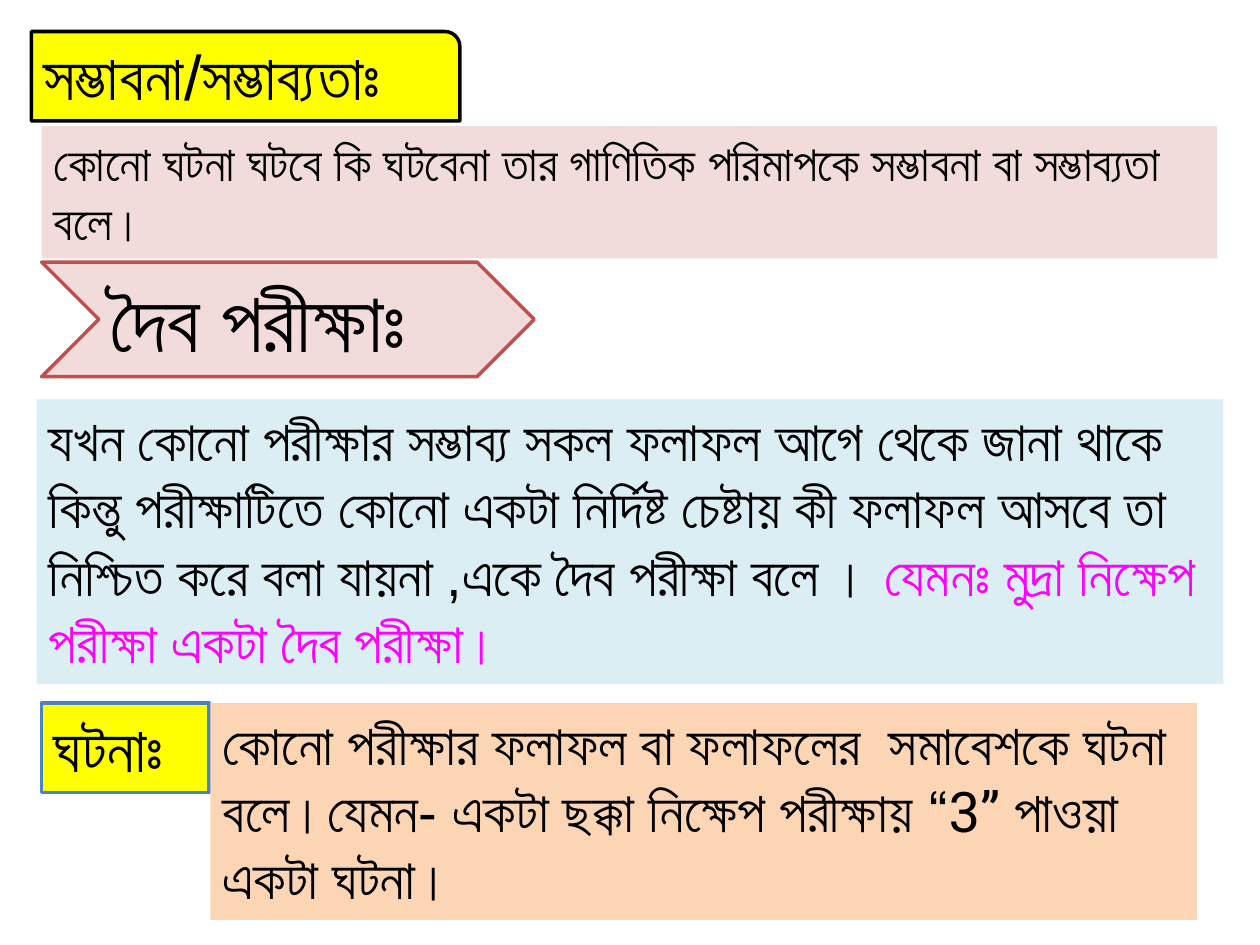
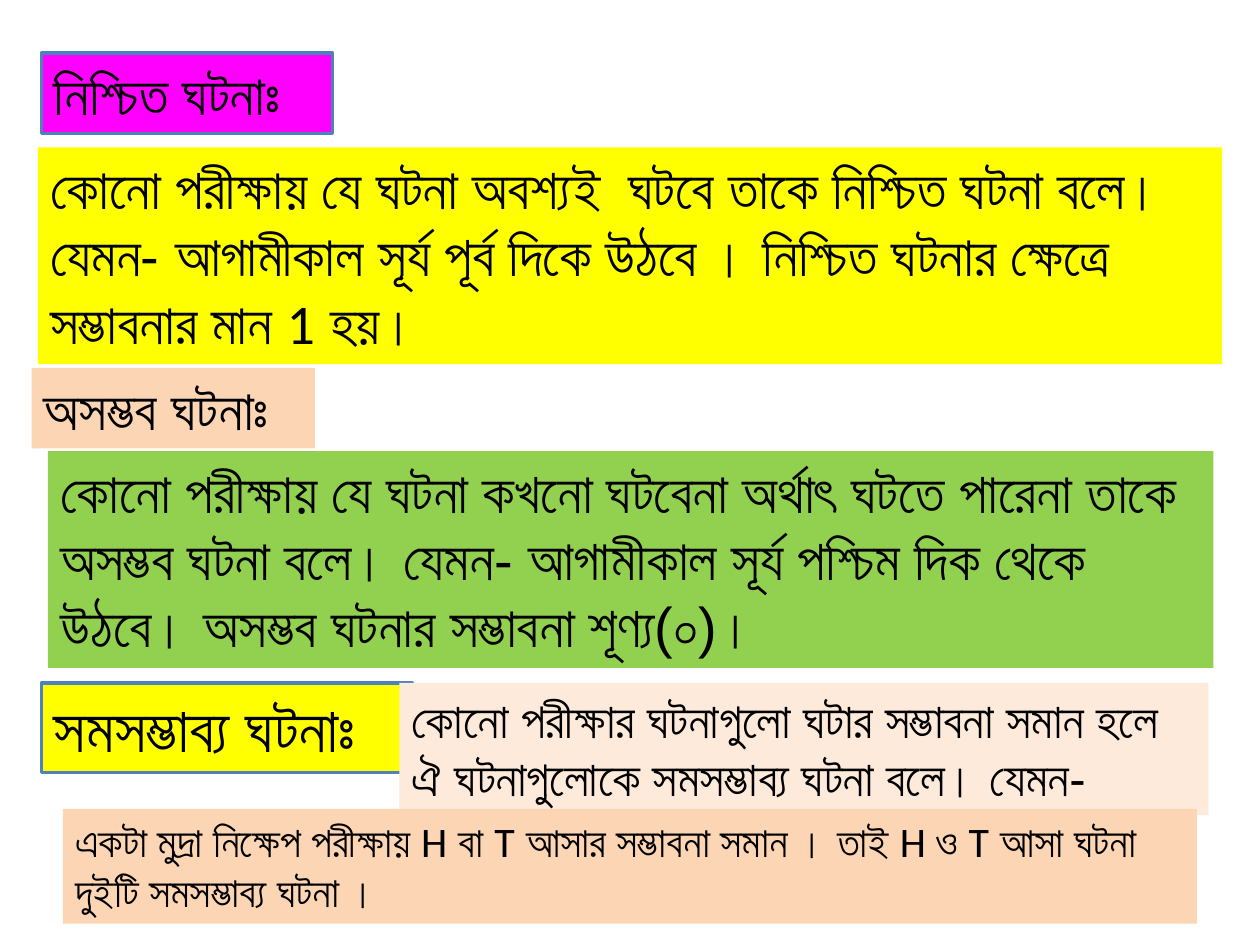
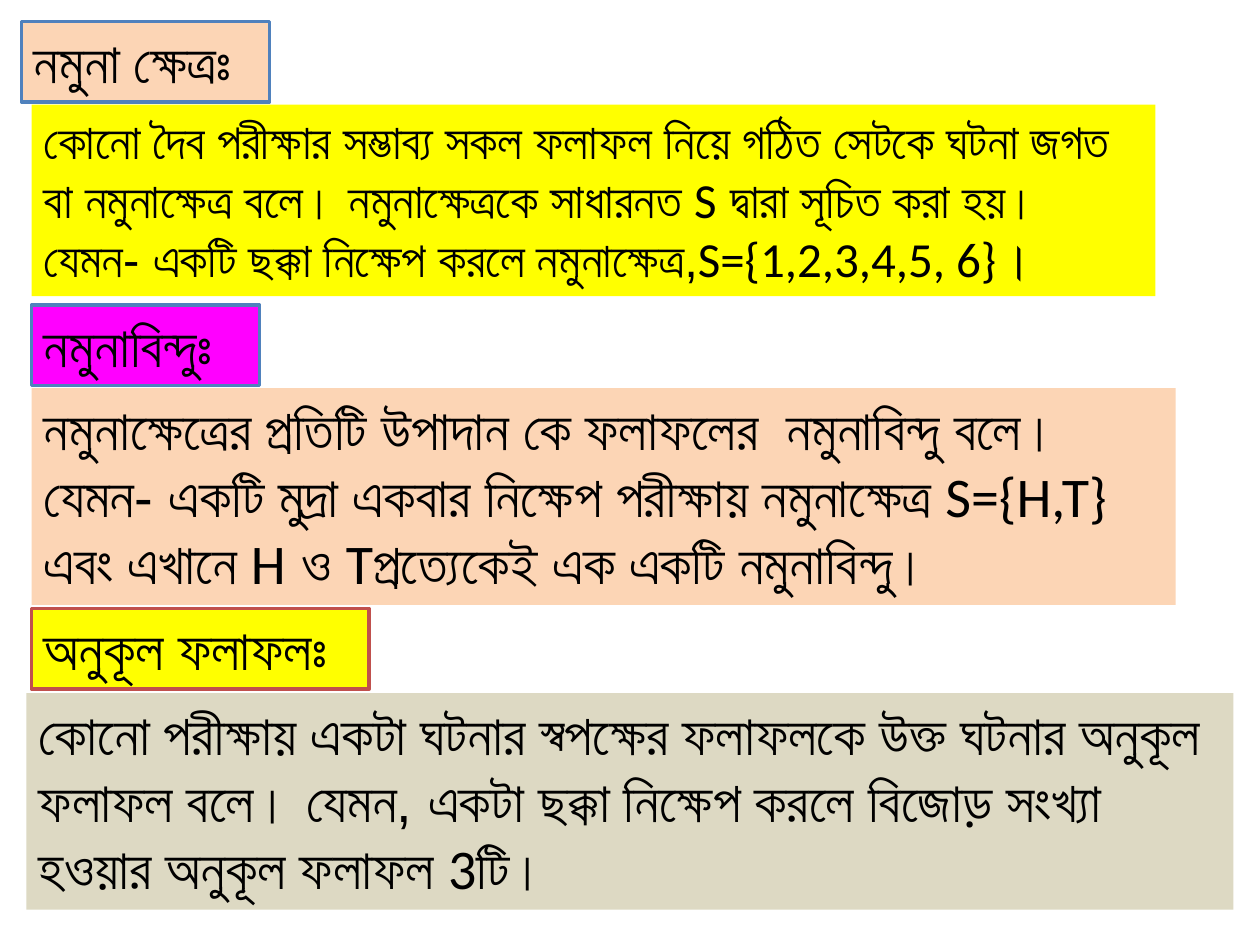
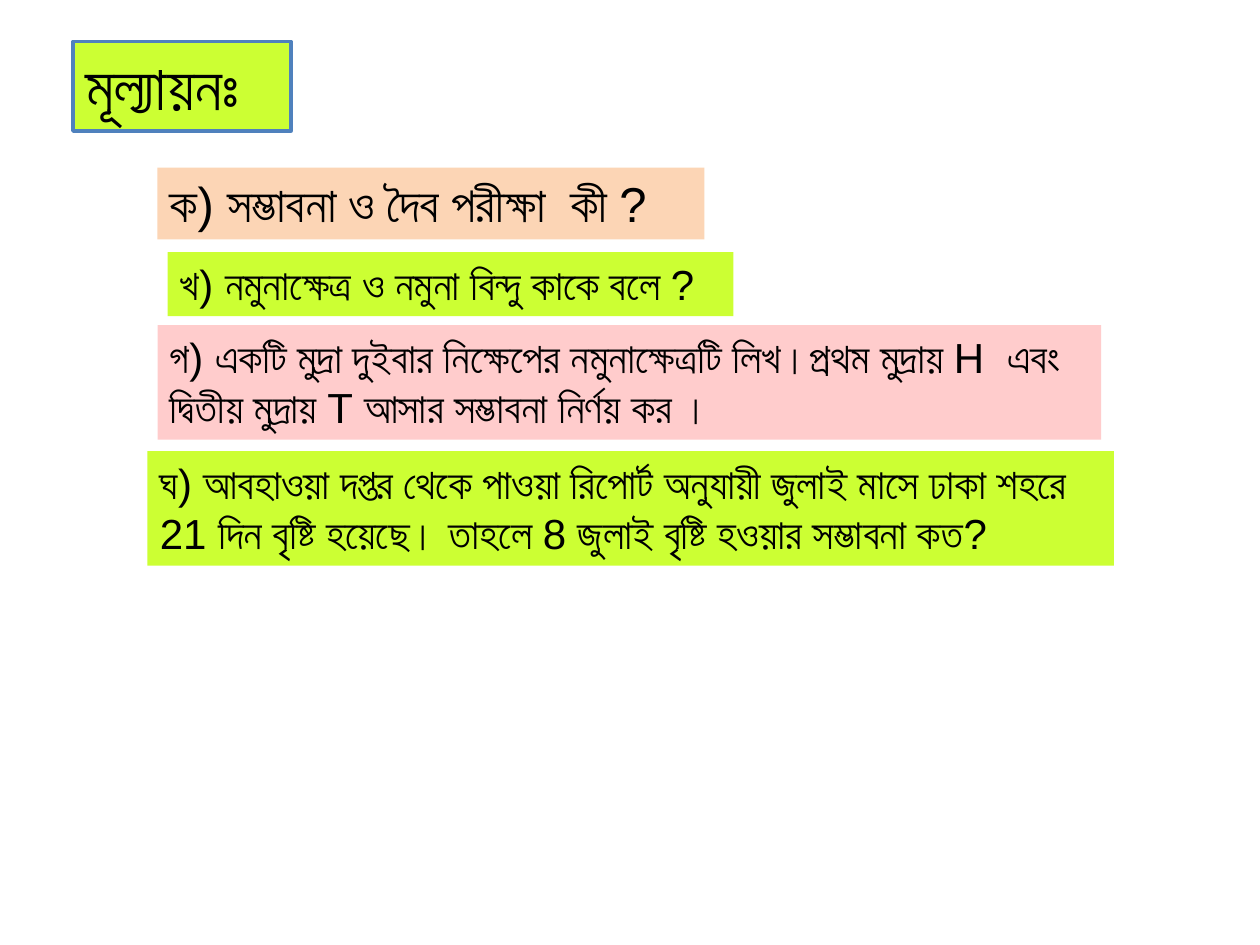
from pptx import Presentation
from pptx.dml.color import RGBColor
from pptx.enum.shapes import MSO_SHAPE
from pptx.enum.text import MSO_ANCHOR, MSO_AUTO_SIZE, PP_ALIGN
from pptx.util import Emu, Pt

RECT = MSO_SHAPE.RECTANGLE
ROUND = MSO_SHAPE.ROUND_1_RECTANGLE
ARROW = MSO_SHAPE.CHEVRON
TOP = MSO_ANCHOR.TOP
LEFT = PP_ALIGN.LEFT
GROW = MSO_AUTO_SIZE.SHAPE_TO_FIT_TEXT

SCALE = 9144
PAD = 10
LEAD = 1.69

BLACK = "000000"
YELLOW = "FFFF00"
PINK = "FF00FF"
ROSE = "F2DCDB"
BLUSH = "FFCCCC"
PEACH = "FCD5B5"
CREAM = "FDEADA"
SKY = "DBEEF4"
GREEN = "92D050"
LIME = "CCFF33"
SAND = "DDD9C3"
BLUE = "4F81BD"
RED = "C0504D"

MAIN = "Arial"
LATIN = "Calibri"
QUOTE = "Roboto"


def px(count):
    return Emu(count * SCALE)


def tint(code):
    return RGBColor.from_string(code)


def latin(text):
    return text, LATIN, BLACK


class Deck:
    def __init__(self):
        self.show = Presentation()
        self.show.slide_width = px(1000)
        self.show.slide_height = px(750)
        self.slide = None

    def page(self):
        self.slide = self.show.slides.add_slide(self.show.slide_layouts[6])

    def box(self, left, top, width, rows, size, fill, *lines, edge=None, kind=RECT):
        height = round(PAD + LEAD * size * rows)
        shape = self.slide.shapes.add_shape(
            kind, px(left), px(top), px(width), px(height))
        shape.shadow.inherit = False
        shape.fill.solid()
        shape.fill.fore_color.rgb = tint(fill)
        if edge:
            shape.line.color.rgb = tint(edge)
            shape.line.width = Pt(2)
        else:
            shape.line.fill.background()
        frame = shape.text_frame
        frame.word_wrap = True
        frame.auto_size = GROW
        frame.vertical_anchor = TOP
        for index, line in enumerate(lines):
            para = frame.add_paragraph() if index else frame.paragraphs[0]
            para.alignment = LEFT
            self.words(para, line, size)
        return shape

    def words(self, para, line, size):
        for part in [line] if isinstance(line, str) else line:
            text, face, hue = (part, MAIN, BLACK) if isinstance(part, str) else part
            run = para.add_run()
            run.text = text
            run.font.name = face
            run.font.size = Pt(size)
            run.font.color.rgb = tint(hue)

    def label(self, left, top, width, size, fill, text, edge=BLUE, kind=RECT):
        return self.box(left, top, width, 1, size, fill, text, edge=edge, kind=kind)


def chance(deck):
    deck.page()
    deck.label(25, 25, 340, 36, YELLOW, "সম্ভাবনা/সম্ভাব্যতাঃ", BLACK, ROUND)
    deck.box(33, 100, 933, 2, 28, ROSE,
             "কোনো ঘটনা ঘটবে কি ঘটবেনা তার গাণিতিক পরিমাপকে সম্ভাবনা বা সম্ভাব্যতা বলে।")
    deck.label(33, 208, 391, 48, ROSE, "দৈব পরীক্ষাঃ", RED, ARROW)
    deck.box(29, 317, 942, 4, 32, SKY,
             "যখন কোনো পরীক্ষার সম্ভাব্য সকল ফলাফল আগে থেকে জানা থাকে কিন্তু "
             "পরীক্ষাটিতে কোনো একটা নির্দিষ্ট চেষ্টায় কী ফলাফল আসবে তা",
             ["নিশ্চিত করে বলা যায়না ,একে দৈব পরীক্ষা বলে । ",
              ("যেমনঃ মুদ্রা নিক্ষেপ পরীক্ষা একটা দৈব পরীক্ষা।", MAIN, PINK)])
    deck.label(33, 558, 133, 36, YELLOW, "ঘটনাঃ")
    deck.box(167, 558, 783, 3, 32, PEACH,
             ["কোনো পরীক্ষার ফলাফল বা ফলাফলের  সমাবেশকে ঘটনা বলে।যেমন- "
              "একটা ছক্কা নিক্ষেপ পরীক্ষায় “",
              ("3” ", QUOTE, BLACK), "পাওয়া একটা ঘটনা।"])


def events(deck):
    deck.page()
    deck.label(33, 42, 231, 32, PINK, "নিশ্চিত ঘটনাঃ")
    deck.box(30, 117, 940, 3, 32, YELLOW,
             "কোনো পরীক্ষায় যে ঘটনা অবশ্যই  ঘটবে তাকে নিশ্চিত ঘটনা বলে।",
             "যেমন- আগামীকাল সূর্য পূর্ব দিকে উঠবে । নিশ্চিত ঘটনার ক্ষেত্রে",
             ["সম্ভাবনার মান ", latin("1"), " হয়।"])
    deck.label(25, 292, 225, 32, PEACH, "অসম্ভব ঘটনাঃ", None)
    deck.box(38, 358, 925, 3, 32, GREEN,
             "কোনো পরীক্ষায় যে ঘটনা কখনো ঘটবেনা অর্থাৎ ঘটতে পারেনা তাকে অসম্ভব "
             "ঘটনা বলে। যেমন- আগামীকাল সূর্য পশ্চিম দিক থেকে উঠবে। "
             "অসম্ভব ঘটনার সম্ভাবনা শূণ্য(০)।")
    deck.label(33, 542, 294, 36, YELLOW, "সমসম্ভাব্য ঘটনাঃ")
    deck.box(317, 542, 642, 2, 28, CREAM,
             "কোনো পরীক্ষার ঘটনাগুলো ঘটার সম্ভাবনা সমান হলে ঐ ঘটনাগুলোকে "
             "সমসম্ভাব্য ঘটনা বলে। যেমন-")
    deck.box(50, 642, 900, 2, 24, PEACH,
             ["একটা মুদ্রা নিক্ষেপ পরীক্ষায় ", latin("H"), " বা ", latin("T"),
              " আসার সম্ভাবনা সমান । তাই ", latin("H ও T"),
              " আসা ঘটনা দুইটি সমসম্ভাব্য ঘটনা ।"])


def sample(deck):
    deck.page()
    deck.label(17, 17, 197, 32, PEACH, "নমুনা ক্ষেত্রঃ")
    deck.box(25, 83, 892, 3, 28, YELLOW,
             ["কোনো দৈব পরীক্ষার সম্ভাব্য সকল ফলাফল নিয়ে গঠিত সেটকে ঘটনা জগত "
              "বা নমুনাক্ষেত্র বলে। নমুনাক্ষেত্রকে সাধারনত ",
              latin("S"), " দ্বারা সূচিত করা হয়।"],
             ["যেমন- একটি ছক্কা নিক্ষেপ করলে নমুনাক্ষেত্র,",
              latin("S={1,2,3,4,5, 6}।")])
    deck.label(25, 242, 181, 32, PINK, "নমুনাবিন্দুঃ")
    deck.box(25, 308, 908, 3, 32, PEACH,
             ["নমুনাক্ষেত্রের প্রতিটি উপাদান কে ফলাফলের  নমুনাবিন্দু বলে। যেমন- "
              "একটি মুদ্রা একবার নিক্ষেপ পরীক্ষায় নমুনাক্ষেত্র ",
              latin("S={H,T}")],
             [latin("এবং এখানে H"), " ও ", latin("T"),
              "প্রত্যেকেই এক একটি নমুনাবিন্দু।"])
    deck.label(25, 483, 268, 32, YELLOW, "অনুকূল ফলাফলঃ", RED)
    deck.box(21, 550, 958, 3, 32, SAND,
             ["কোনো পরীক্ষায় একটা ঘটনার স্বপক্ষের ফলাফলকে উক্ত ঘটনার অনুকূল "
              "ফলাফল বলে। যেমন, একটা ছক্কা নিক্ষেপ করলে বিজোড় সংখ্যা "
              "হওয়ার অনুকূল ফলাফল ",
              latin("3"), "টি।"])


def quiz(deck):
    deck.page()
    deck.label(58, 33, 173, 36, LIME, "মূল্যায়নঃ")
    deck.box(125, 133, 434, 1, 28, PEACH, "ক) সম্ভাবনা ও দৈব পরীক্ষা  কী ?")
    deck.box(133, 200, 449, 1, 24, LIME, "খ) নমুনাক্ষেত্র ও নমুনা বিন্দু কাকে বলে ?")
    deck.box(125, 258, 749, 2, 24, BLUSH,
             "গ) একটি মুদ্রা দুইবার নিক্ষেপের নমুনাক্ষেত্রটি লিখ।প্রথম মুদ্রায় H  এবং",
             "দ্বিতীয় মুদ্রায় T আসার সম্ভাবনা নির্ণয় কর ।")
    deck.box(117, 358, 767, 2, 24, LIME,
             "ঘ) আবহাওয়া দপ্তর থেকে পাওয়া রিপোর্ট অনুযায়ী জুলাই মাসে ঢাকা শহরে "
             "21 দিন বৃষ্টি হয়েছে। তাহলে 8 জুলাই বৃষ্টি হওয়ার সম্ভাবনা কত?")


def main():
    deck = Deck()
    for build in (chance, events, sample, quiz):
        build(deck)
    deck.show.save("out.pptx")


if __name__ == "__main__":
    main()
